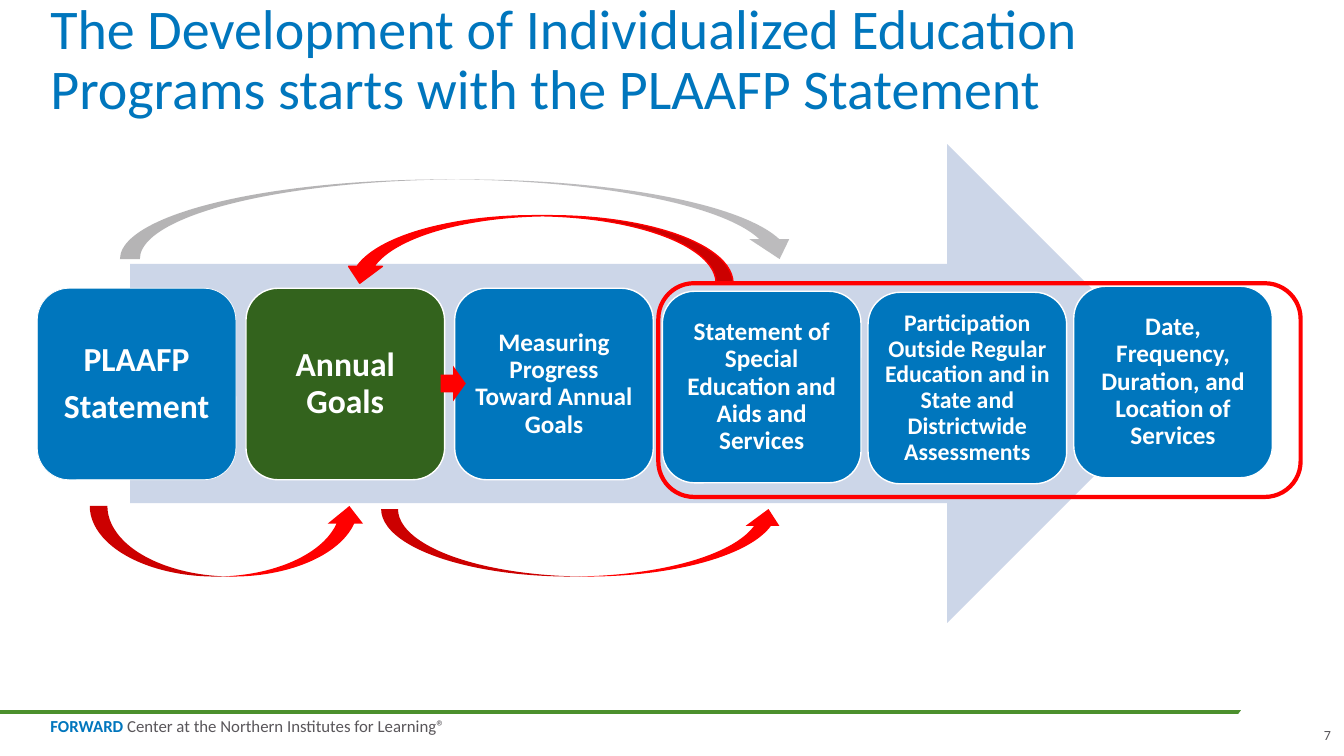
import pptx
import pptx.util
import pptx.dml.color
import pptx.enum.shapes
import pptx.enum.text
import pptx.oxml.ns
from lxml import etree

Pt = pptx.util.Pt
SHAPE = pptx.enum.shapes.MSO_SHAPE
ALIGN = pptx.enum.text.PP_ALIGN
ANCHOR = pptx.enum.text.MSO_ANCHOR
qn = pptx.oxml.ns.qn

PX = 9144  # EMU in one px, 100 px to the inch
FONT = "Calibri"
COLORS = {"blue": "0076BD", "green": "33631D", "rule": "4C902D", "pale": "CCD6E8",
          "red": "FF0000", "gray": "59565A", "white": "FFFFFF"}

TITLE = "The Development of Individualized Education Programs starts with the PLAAFP Statement"
FOOTER = [("FORWARD", "blue", True),
          (" Center at the Northern Institutes for Learning®", "gray", False)]
PAGE = "7"

STEP_W, STEP_H = 197, 190
# left, top, fill, outline pt, text size, inset, paragraphs
STEPS = [
    (37, 286, "blue", 0.5, 24, 10, ["PLAAFP", "Statement"]),
    (244, 286, "green", 1, 24, 10, ["Annual Goals"]),
    (451, 286, "blue", 1, 18, 7, ["Measuring Progress Toward Annual Goals"]),
    (657, 289, "blue", 1, 18, 7, ["Statement of Special Education and Aids and Services"]),
    (861, 290, "blue", 1, 17, 7, ["Participation Outside Regular Education and in State "
                                  "and Districtwide Assessments"]),
    (1065, 284, "blue", 1, 18, 7, ["Date, Frequency, Duration, and Location of Services"]),
]

# preset, box, fill, outline, outline pt, rotation
PROCESS_ARROW = (SHAPE.RIGHT_ARROW, (129, 143, 1048, 475), "pale", None, 0, 0)
FOOTER_MASK = (SHAPE.OVAL, (1216, 677, 119, 58), "white", None, 0, 332.1)
LINKS = [
    (SHAPE.CURVED_UP_ARROW, (89, 502, 275, 70), "red", None, 0, 0),
    (SHAPE.CURVED_UP_ARROW, (378, 505, 401, 67), "red", None, 0, 0),
    (SHAPE.RIGHT_ARROW, (437, 363, 25, 35), "red", None, 0, 0),
    (SHAPE.CURVED_UP_ARROW, (340, 214, 387, 67), "red", "red", 1, 180),
    (SHAPE.ROUNDED_RECTANGLE, (653, 281, 637, 212), None, "red", 3, 0),
]
PLAAFP_TO_SERVICES = (SHAPE.CURVED_DOWN_ARROW, (119, 178, 674, 79), "gray", None, 0, 0)


def rgb(name):
    return pptx.dml.color.RGBColor.from_string(COLORS[name])


def emu(lengths):
    return [n * PX for n in lengths]


def add_shape(s, preset, box, fill, outline, weight, rotation):
    sp = s.shapes.add_shape(preset, *emu(box))
    sp.shadow.inherit = False
    sp.rotation = rotation
    if fill:
        sp.fill.solid()
        sp.fill.fore_color.rgb = rgb(fill)
    else:
        sp.fill.background()
    if outline:
        sp.line.color.rgb = rgb(outline)
        sp.line.width = Pt(weight)
    else:
        sp.line.fill.background()
    return sp


def set_frame(tf, inset=0, wrap=True, anchor=ANCHOR.TOP):
    formats = {f"margin_{side}": inset * PX for side in ("left", "top", "right", "bottom")}
    formats.update(word_wrap=wrap, vertical_anchor=anchor)
    for name, value in formats.items():
        setattr(tf, name, value)


def write(p, runs, size, **formats):
    """Fill a paragraph with (text, colour, bold) runs and set its formats."""
    for name, value in formats.items():
        setattr(p, name, value)
    for text, color, bold in runs:
        r = p.add_run()
        r.text = text
        for name, value in {"name": FONT, "size": Pt(size), "bold": bold}.items():
            setattr(r.font, name, value)
        r.font.color.rgb = rgb(color)


def add_text(s, box, runs, size, wrap, anchor, **formats):
    tf = s.shapes.add_textbox(*emu(box)).text_frame
    set_frame(tf, wrap=wrap, anchor=anchor)
    write(tf.paragraphs[0], runs, size, **formats)


def add_step(s, left, top, fill, weight, size, inset, lines):
    sp = add_shape(s, SHAPE.ROUNDED_RECTANGLE, (left, top, STEP_W, STEP_H),
                   fill, "white", weight, 0)
    tf = sp.text_frame
    set_frame(tf, inset, anchor=ANCHOR.MIDDLE)
    for i, line in enumerate(lines):
        p = tf.add_paragraph() if i else tf.paragraphs[0]
        write(p, [(line, "white", True)], size, alignment=ALIGN.CENTER,
              line_spacing=0.9, space_after=Pt(round(size * 0.35)))


def add_footer_rule(s):
    rule = s.shapes.add_connector(pptx.enum.shapes.MSO_CONNECTOR.STRAIGHT,
                                  *emu((0, 706, 1300, 706)))
    rule.line.color.rgb = rgb("rule")
    rule.line.width = Pt(3)
    etree.SubElement(rule._element.spPr, qn("a:effectLst"))


def main():
    prs = pptx.Presentation()
    prs.slide_width, prs.slide_height = emu((1333, 750))
    s = prs.slides.add_slide(prs.slide_layouts[6])

    add_footer_rule(s)
    add_text(s, (50, 713, 402, 17), FOOTER, 12, False, ANCHOR.TOP, line_spacing=0.85)
    add_shape(s, *FOOTER_MASK)
    add_text(s, (50, 0, 1240, 121), [(TITLE, "blue", False)], 40, True, ANCHOR.BOTTOM,
             line_spacing=0.9)
    add_text(s, (1303, 720, 17, 17), [(PAGE, "gray", False)], 10, False, ANCHOR.BOTTOM,
             alignment=ALIGN.RIGHT)

    add_shape(s, *PROCESS_ARROW)
    for step in STEPS:
        add_step(s, *step)
    for link in LINKS:
        add_shape(s, *link)
    sp = add_shape(s, *PLAAFP_TO_SERVICES)
    color = sp._element.spPr.find(qn("a:solidFill"))[0]
    etree.SubElement(color, qn("a:alpha"), val="40000")

    prs.save("out.pptx")


if __name__ == "__main__":
    main()
